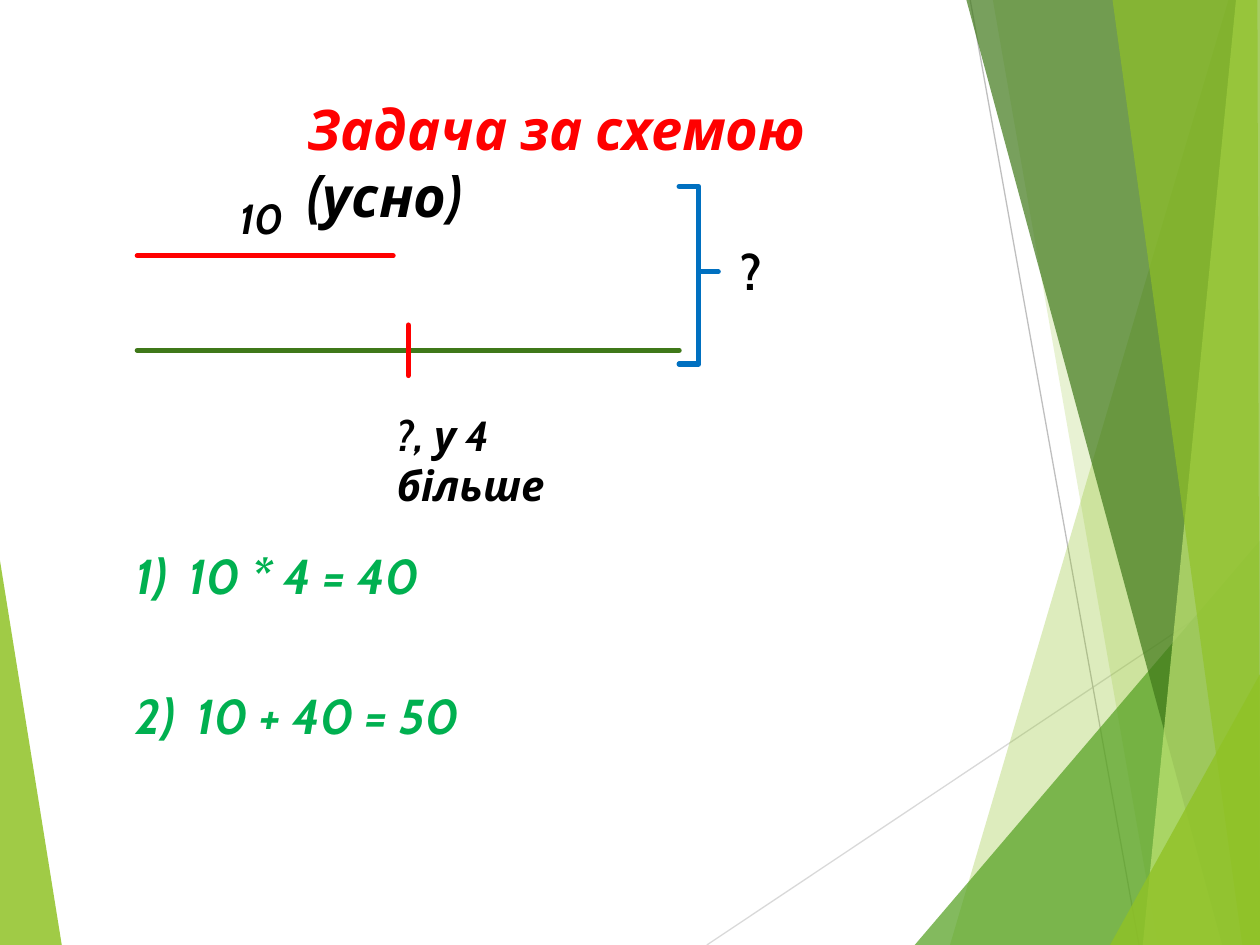
from lxml import etree
from pptx import Presentation
from pptx.dml.color import RGBColor
from pptx.enum.shapes import MSO_CONNECTOR, MSO_SHAPE
from pptx.enum.text import MSO_AUTO_SIZE
from pptx.oxml.ns import qn
from pptx.util import Inches, Pt

STRAIGHT = MSO_CONNECTOR.STRAIGHT
RIGHT_BRACE = MSO_SHAPE.RIGHT_BRACE
GROW = MSO_AUTO_SIZE.SHAPE_TO_FIT_TEXT

BLACK = RGBColor(0x00, 0x00, 0x00)
RED = RGBColor(0xFF, 0x00, 0x00)
BLUE = RGBColor(0x00, 0x70, 0xC0)
ANSWER_GREEN = RGBColor(0x00, 0xB0, 0x50)
LIME = RGBColor(0x90, 0xC2, 0x26)
LEAF = RGBColor(0x54, 0xA0, 0x21)
FOREST = RGBColor(0x3F, 0x78, 0x19)
PALE_LIME = RGBColor(0xC0, 0xE4, 0x74)
LIGHT_GREY = RGBColor(0xD9, 0xD9, 0xD9)
GREY = RGBColor(0xBF, 0xBF, 0xBF)

WIDTH, HEIGHT = 10, 7.5
LEFT_FACET = ([(0, 4.45), (0.49, HEIGHT), (0, HEIGHT)], LIME, 85)
RIGHT_FACETS = [
    ([(9.75, 0), (7.54, HEIGHT), (WIDTH, HEIGHT), (WIDTH, 0)], LIME, 30),
    ([(7.88, 0), (9.19, HEIGHT), (WIDTH, HEIGHT), (WIDTH, 0)], LIME, 20),
    ([(7.26, HEIGHT), (WIDTH, 4.29), (WIDTH, HEIGHT)], LEAF, 72),
    ([(7.67, 0), (9.7, HEIGHT), (WIDTH, HEIGHT), (WIDTH, 0)], FOREST, 70),
    ([(9.81, 0), (9.07, HEIGHT), (WIDTH, HEIGHT), (WIDTH, 0)], PALE_LIME, 70),
    ([(8.83, 0), (9.86, HEIGHT), (WIDTH, HEIGHT), (9.98, 0)], LIME, 65),
    ([(8.81, HEIGHT), (WIDTH, 5.35), (WIDTH, HEIGHT)], LIME, 80),
]


class SlideBuilder:
    font_name = "Cabin"

    def __init__(self, slide):
        self.slide = slide

    def style_line(self, shape, color, width):
        shape.line.color.rgb = color
        shape.line.width = Pt(width)
        if width > 1:
            shape._element.spPr.find(qn("a:ln")).set("cap", "rnd")

    def facet(self, points, color, opacity):
        corners = [(Inches(x), Inches(y)) for x, y in points]
        builder = self.slide.shapes.build_freeform(*corners[0])
        builder.add_line_segments(corners[1:], close=True)
        shape = builder.convert_to_shape()
        shape.shadow.inherit = False
        shape.fill.solid()
        shape.fill.fore_color.rgb = color
        shape.line.fill.background()
        color_element = shape._element.spPr.find(qn("a:solidFill"))[0]
        etree.SubElement(color_element, qn("a:alpha")).set("val", str(opacity * 1000))

    def line(self, start, end, color, width=3):
        ends = [Inches(value) for value in (*start, *end)]
        connector = self.slide.shapes.add_connector(STRAIGHT, *ends)
        self.style_line(connector, color, width)
        etree.SubElement(connector._element.spPr, qn("a:effectLst"))

    def brace(self, left, top, width, height, color):
        shape = self.slide.shapes.add_shape(
            RIGHT_BRACE, Inches(left), Inches(top), Inches(width), Inches(height))
        shape.adjustments[0] = 0
        shape.adjustments[1] = 0.48
        shape.shadow.inherit = False
        shape.fill.background()
        self.style_line(shape, color, 3)

    def text(self, left, top, width, height, size, runs, italic=True):
        box = self.slide.shapes.add_textbox(
            Inches(left), Inches(top), Inches(width), Inches(height))
        frame = box.text_frame
        frame.word_wrap = True
        frame.auto_size = GROW
        paragraph = frame.paragraphs[0]
        paragraph.font.name = self.font_name
        paragraph.font.size = Pt(size)
        paragraph.font.bold = True
        paragraph.font.italic = italic
        for words, color in runs:
            run = paragraph.add_run()
            run.text = words
            run.font.color.rgb = color


def main():
    presentation = Presentation()
    presentation.slide_width = Inches(WIDTH)
    presentation.slide_height = Inches(HEIGHT)
    builder = SlideBuilder(presentation.slides.add_slide(presentation.slide_layouts[6]))

    builder.facet(*LEFT_FACET)
    builder.line((5.61, HEIGHT), (WIDTH, 4.57), LIGHT_GREY, 0.75)
    builder.line((7.7, 0), (9.04, HEIGHT), GREY, 0.75)
    for facet in RIGHT_FACETS:
        builder.facet(*facet)

    builder.text(2.34, 0.7, 5.16, 1.18, 32,
                 [("Задача за схемою ", RED), ("(усно)", BLACK)])
    builder.line((1.09, 2.03), (3.12, 2.03), RED)
    builder.text(1.8, 1.48, 0.94, 0.5, 24, [("10", BLACK)])
    builder.line((1.09, 2.78), (5.39, 2.78), FOREST)
    builder.line((3.24, 2.58), (3.24, 2.98), RED)
    builder.text(3.05, 3.2, 2.03, 0.5, 24, [("?, у 4 більше", BLACK)])
    builder.text(5.78, 1.87, 0.7, 0.57, 28, [("?", BLACK)], italic=False)
    builder.brace(5.39, 1.48, 0.31, 1.41, BLUE)
    builder.text(0.98, 4.28, 6.41, 0.57, 28, [("1)  10 * 4 = 40", ANSWER_GREEN)])
    builder.text(0.98, 5.39, 3.86, 0.57, 28, [("2)  10 + 40 = 50", ANSWER_GREEN)])

    presentation.save("out.pptx")


if __name__ == "__main__":
    main()
